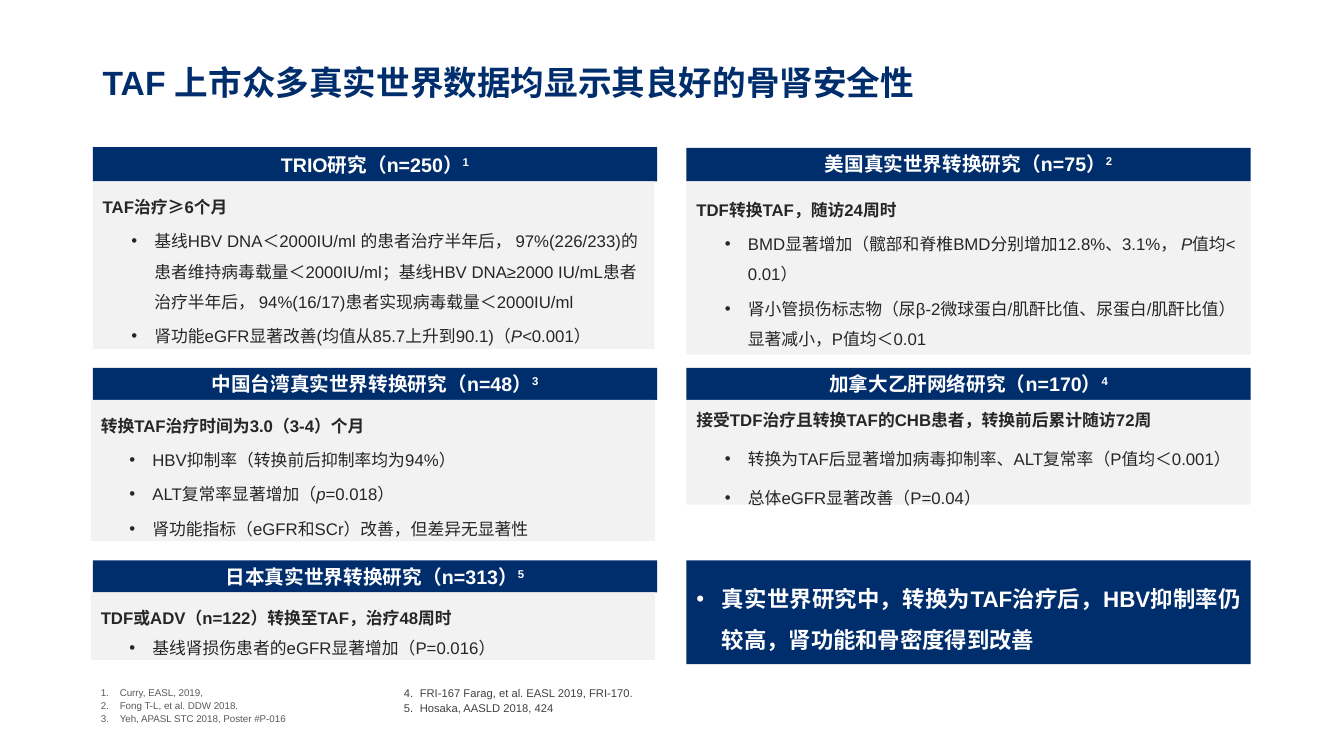
"""Build a slide on the renal and bone safety of TAF in real-world studies."""
import pptx
import pptx.util
import pptx.dml.color
import pptx.enum.lang
import pptx.enum.shapes
import pptx.enum.text
import pptx.oxml.ns
from dataclasses import dataclass
from lxml import etree
from pptx.util import Cm

TITLE = "TAF 上市众多真实世界数据均显示其良好的骨肾安全性"

# Odd-numbered parts of a point are italic.
STUDIES = [
    dict(head="TRIO研究（n=250）", note="1", left=2.34, top=3.71, head_height=0.86,
         panel_left=2.34, panel_width=14.15, panel_height=4.22,
         lead="TAF治疗≥6个月",
         points=[("基线HBV DNA＜2000IU/ml 的患者治疗半年后， 97%(226/233)的患者维持病毒载量＜2000IU/ml；"
                  "基线HBV DNA≥2000 IU/mL患者治疗半年后， 94%(16/17)患者实现病毒载量＜2000IU/ml",),
                 ("肾功能eGFR显著改善(均值从85.7上升到90.1)（", "P<", "0.001）")]),
    dict(head="美国真实世界转换研究（n=75）", note="2", left=17.3, top=3.73, head_height=0.84,
         panel_left=17.3, panel_height=4.37, inset=0.2, head_spacing=0.9,
         lead="TDF转换TAF，随访24周时",
         points=[("BMD显著增加（髋部和脊椎BMD分别增加12.8%、3.1%，", " P", "值均< 0.01）"),
                 ("肾小管损伤标志物（尿β-2微球蛋白/肌酐比值、尿蛋白/肌酐比值）显著减小，P值均＜0.01",)]),
    dict(head="中国台湾真实世界转换研究（n=48）", note="3", left=2.34, top=9.27,
         panel_left=2.29, panel_height=3.56,
         lead="转换TAF治疗时间为3.0（3-4）个月",
         points=[("HBV抑制率（转换前后抑制率均为94%）",),
                 ("ALT复常率显著增加（", "p", "=0.018）"),
                 ("肾功能指标（eGFR和SCr）改善，但差异无显著性",)]),
    dict(head="加拿大乙肝网络研究（n=170）", note="4", left=17.3, top=9.27,
         panel_left=17.3, panel_height=2.64, inset=0, before=6,
         lead="接受TDF治疗且转换TAF的CHB患者，转换前后累计随访72周",
         points=[("转换为TAF后显著增加病毒抑制率、ALT复常率（P值均＜0.001）",),
                 ("总体eGFR显著改善（P=0.04）",)]),
    dict(head="日本真实世界转换研究（n=313）", note="5", left=2.34, top=14.12,
         panel_left=2.29, panel_height=1.7, before=0,
         lead="TDF或ADV（n=122）转换至TAF，治疗48周时",
         points=[("基线肾损伤患者的eGFR显著增加（P=0.016）",)]),
]
CONCLUSION = "真实世界研究中，转换为TAF治疗后，HBV抑制率仍较高，肾功能和骨密度得到改善"
REFERENCES = [
    dict(left=2.29, width=7, first=1, size=7, color="595959", hang=0.48,
         lines=["Curry, EASL, 2019,", "Fong T-L, et al. DDW 2018.",
                "Yeh, APASL STC 2018, Poster #P-016"]),
    dict(left=9.93, width=6.55, first=4, size=8, color="404040", hang=0.4,
         lines=["FRI-167 Farag, et al. EASL 2019, FRI-170.",
                "Hosaka, AASLD 2018, 424"]),
]


@dataclass(frozen=True)
class Theme:
    font: str = "Arial"
    navy: str = "002E6D"
    panel: str = "F2F2F2"
    white: str = "FFFFFF"
    body: str = "262626"
    title_size: int = 24
    conclusion_size: int = 16
    head_size: int = 14
    body_size: int = 12


THEME = Theme()
COLUMN_WIDTH = 14.22
HEAD_HEIGHT = 0.81
ALIGN = pptx.enum.text.PP_ALIGN
ANCHOR = pptx.enum.text.MSO_ANCHOR


def rgb(color):
    return pptx.dml.color.RGBColor.from_string(color)


def add_box(page, left, top, width, height, fill=None, anchor=ANCHOR.TOP, inset=0.13):
    place = Cm(left), Cm(top), Cm(width), Cm(height)
    if fill:
        box = page.shapes.add_shape(pptx.enum.shapes.MSO_SHAPE.RECTANGLE, *place)
        box.shadow.inherit = False
        box.fill.solid()
        box.fill.fore_color.rgb = rgb(fill)
        box.line.fill.background()
    else:
        box = page.shapes.add_textbox(*place)
    frame = box.text_frame
    frame.word_wrap = True
    frame.auto_size = pptx.enum.text.MSO_AUTO_SIZE.NONE
    frame.vertical_anchor = anchor
    frame.margin_left = frame.margin_right = Cm(0.25)
    frame.margin_top = frame.margin_bottom = Cm(inset)
    return box


def add_text(box, *parts, size, color, bold=False, align=ALIGN.LEFT, spacing=1.0,
             before=0, indent=0, hang=0, bullet=None, number=None, note=None):
    frame = box.text_frame
    is_first = not frame.paragraphs[0].runs
    para = frame.paragraphs[0] if is_first else frame.add_paragraph()
    properties = para._p.get_or_add_pPr()
    if bullet or number:
        properties.set("marL", str(Cm(indent)))
        properties.set("indent", str(-Cm(hang)))
    if bullet:
        font = etree.SubElement(properties, pptx.oxml.ns.qn("a:buFont"))
        font.set("typeface", THEME.font)
        etree.SubElement(properties, pptx.oxml.ns.qn("a:buChar")).set("char", bullet)
    if number:
        marker = etree.SubElement(properties, pptx.oxml.ns.qn("a:buAutoNum"))
        marker.set("type", "arabicPeriod")
        marker.set("startAt", str(number))
    para.alignment = align
    para.line_spacing = spacing
    para.space_before = pptx.util.Pt(0 if is_first else before)
    for index, part in enumerate(parts + ((note,) if note else ())):
        span = para.add_run()
        span.text = part
        span.font.name = THEME.font
        span.font.size = pptx.util.Pt(size)
        span.font.bold = bold
        span.font.italic = index % 2 == 1 and not note
        span.font.color.rgb = rgb(color)
        span.font.language_id = pptx.enum.lang.MSO_LANGUAGE_ID.SIMPLIFIED_CHINESE
    if note:
        span._r.get_or_add_rPr().set("baseline", "30000")


def add_study(page, head, note, left, top, panel_left, panel_height, lead, points,
              head_height=HEAD_HEIGHT, panel_width=COLUMN_WIDTH, inset=0.13,
              head_spacing=1.0, before=3):
    header = add_box(page, left, top, COLUMN_WIDTH, head_height, THEME.navy, ANCHOR.MIDDLE)
    add_text(header, head, note=note, size=THEME.head_size, color=THEME.white,
             bold=True, align=ALIGN.CENTER, spacing=head_spacing)
    panel = add_box(page, panel_left, top + head_height, panel_width, panel_height,
                    THEME.panel, inset=inset)
    style = dict(size=THEME.body_size, color=THEME.body, spacing=1.5, before=before)
    add_text(panel, lead, bold=True, **style)
    for point in points:
        add_text(panel, *point, bullet="•", indent=1.3, hang=0.58, **style)


def main():
    deck = pptx.Presentation()
    deck.slide_width, deck.slide_height = Cm(33.87), Cm(19.05)
    page = deck.slides.add_slide(deck.slide_layouts[6])

    title = add_box(page, 2.34, 1.04, 29.21, 2.08, anchor=ANCHOR.MIDDLE)
    add_text(title, TITLE, size=THEME.title_size, color=THEME.navy, bold=True)

    for study in STUDIES:
        add_study(page, **study)

    conclusion = add_box(page, 17.3, 14.12, COLUMN_WIDTH, 2.62, THEME.navy, ANCHOR.MIDDLE)
    add_text(conclusion, CONCLUSION, size=THEME.conclusion_size, color=THEME.white, bold=True,
             align=ALIGN.JUSTIFY, spacing=1.5, bullet="•", indent=0.64, hang=0.64)

    for group in REFERENCES:
        box = add_box(page, group["left"], 17.17, group["width"], 1.32)
        for line in group["lines"]:
            add_text(box, line, size=group["size"], color=group["color"], before=1,
                     number=group["first"], indent=group["hang"], hang=group["hang"])

    deck.save("out.pptx")


if __name__ == "__main__":
    main()
